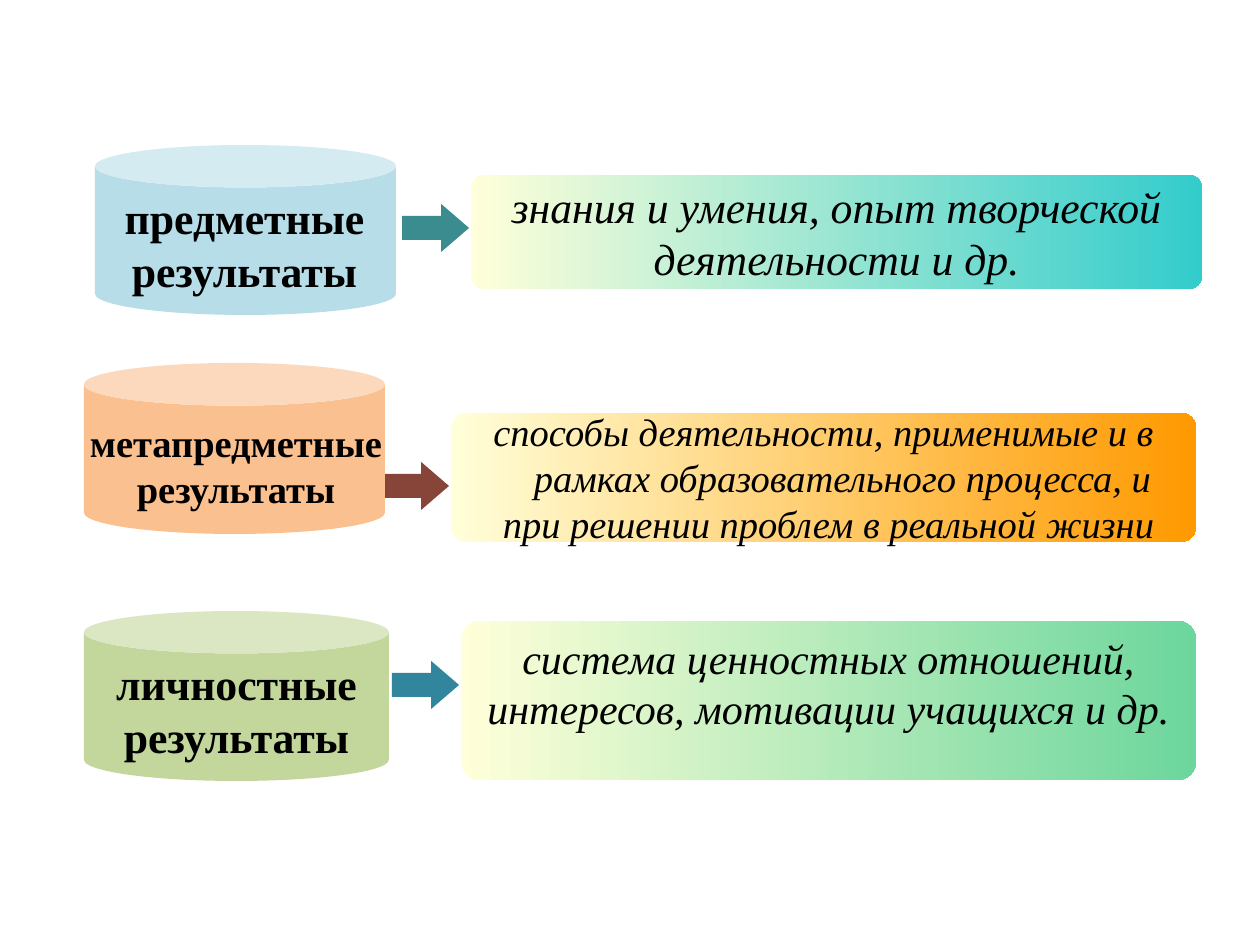
from pptx import Presentation
from pptx.dml.color import RGBColor
from pptx.enum.shapes import MSO_SHAPE
from pptx.enum.text import MSO_ANCHOR, PP_ALIGN
from pptx.util import Emu, Pt

PX = 914400 // 126
FONT = "Times New Roman"
BLACK = RGBColor(0x00, 0x00, 0x00)
CREAM = RGBColor(0xFF, 0xFF, 0xD9)

# Boxes are (left, top, width, height) in px.
RESULTS = [
    dict(
        label=["предметные", "результаты"], label_size=25,
        label_box=(95, 185, 299, 117),
        can=(95, 145, 301, 170), can_color=RGBColor(0xB7, 0xDE, 0xE8),
        arrow=(402, 204), arrow_color=RGBColor(0x3A, 0x8C, 0x8E),
        meaning=["знания и умения, опыт творческой", "деятельности и др."],
        meaning_size=25, meaning_box=(471, 175, 731, 114),
        meaning_color=RGBColor(0x33, 0xCC, 0xCC),
        anchor=MSO_ANCHOR.MIDDLE, indents={},
    ),
    dict(
        label=["метапредметные", "результаты"], label_size=22,
        label_box=(74, 413, 324, 105),
        can=(84, 363, 301, 171), can_color=RGBColor(0xFA, 0xC0, 0x90),
        arrow=(382, 462), arrow_color=RGBColor(0x87, 0x44, 0x39),
        meaning=["способы деятельности, применимые и в",
                 "рамках образовательного процесса, и",
                 "при решении проблем в реальной жизни"],
        meaning_size=22, meaning_box=(451, 413, 745, 129),
        meaning_color=RGBColor(0xFF, 0x99, 0x00),
        anchor=MSO_ANCHOR.MIDDLE, indents={1: 38, 2: 10},
    ),
    dict(
        label=["личностные", "результаты"], label_size=25,
        label_box=(84, 651, 305, 117),
        can=(84, 611, 305, 170), can_color=RGBColor(0xC3, 0xD6, 0x9B),
        arrow=(392, 661), arrow_color=RGBColor(0x31, 0x85, 0x9C),
        meaning=["система ценностных отношений,",
                 "интересов, мотивации учащихся и др."],
        meaning_size=24, meaning_box=(461, 621, 735, 159),
        meaning_color=RGBColor(0x6C, 0xD6, 0x9C),
        anchor=MSO_ANCHOR.TOP, indents={},
    ),
]
ARROW_SIZE = (67, 48)


def to_emu(box):
    return [Emu(length * PX) for length in box]


def add_figure(slide, preset, box, adjustments):
    figure = slide.shapes.add_shape(preset, *to_emu(box))
    figure.shadow.inherit = False
    figure.line.fill.background()
    for index, value in enumerate(adjustments):
        figure.adjustments[index] = value
    return figure


def fill_solid(figure, color):
    figure.fill.solid()
    figure.fill.fore_color.rgb = color


def write_lines(frame, lines, size, anchor, indents, bold=False, italic=False):
    """Write centred lines; indents maps a line number to its left margin."""
    frame.word_wrap = True
    frame.vertical_anchor = anchor
    for number, line in enumerate(lines):
        paragraph = frame.paragraphs[0] if number == 0 else frame.add_paragraph()
        paragraph.text = line
        paragraph.alignment = PP_ALIGN.CENTER
        if number in indents:
            paragraph._p.get_or_add_pPr().set("marL", str(indents[number] * PX))
        font = paragraph.font
        font.name, font.size = FONT, Pt(size)
        font.bold, font.italic = bold, italic
        font.color.rgb = BLACK


def add_result(slide, result):
    meaning = add_figure(slide, MSO_SHAPE.ROUNDED_RECTANGLE,
                         result["meaning_box"], [0.115])
    meaning.fill.gradient()
    meaning.fill.gradient_angle = 0
    for stop, color in zip(meaning.fill.gradient_stops,
                           (CREAM, result["meaning_color"])):
        stop.color.rgb = color
    write_lines(meaning.text_frame, result["meaning"], result["meaning_size"],
                result["anchor"], result["indents"], italic=True)

    arrow = add_figure(slide, MSO_SHAPE.RIGHT_ARROW,
                       result["arrow"] + ARROW_SIZE, [0.5, 0.58])
    fill_solid(arrow, result["arrow_color"])
    can = add_figure(slide, MSO_SHAPE.CAN, result["can"], [0.25])
    fill_solid(can, result["can_color"])

    label = slide.shapes.add_textbox(*to_emu(result["label_box"]))
    write_lines(label.text_frame, result["label"], result["label_size"],
                MSO_ANCHOR.TOP, {}, bold=True)


def main():
    presentation = Presentation()
    presentation.slide_width, presentation.slide_height = to_emu((1260, 945))
    slide = presentation.slides.add_slide(presentation.slide_layouts[6])
    for result in RESULTS:
        add_result(slide, result)
    presentation.save("out.pptx")


if __name__ == "__main__":
    main()
